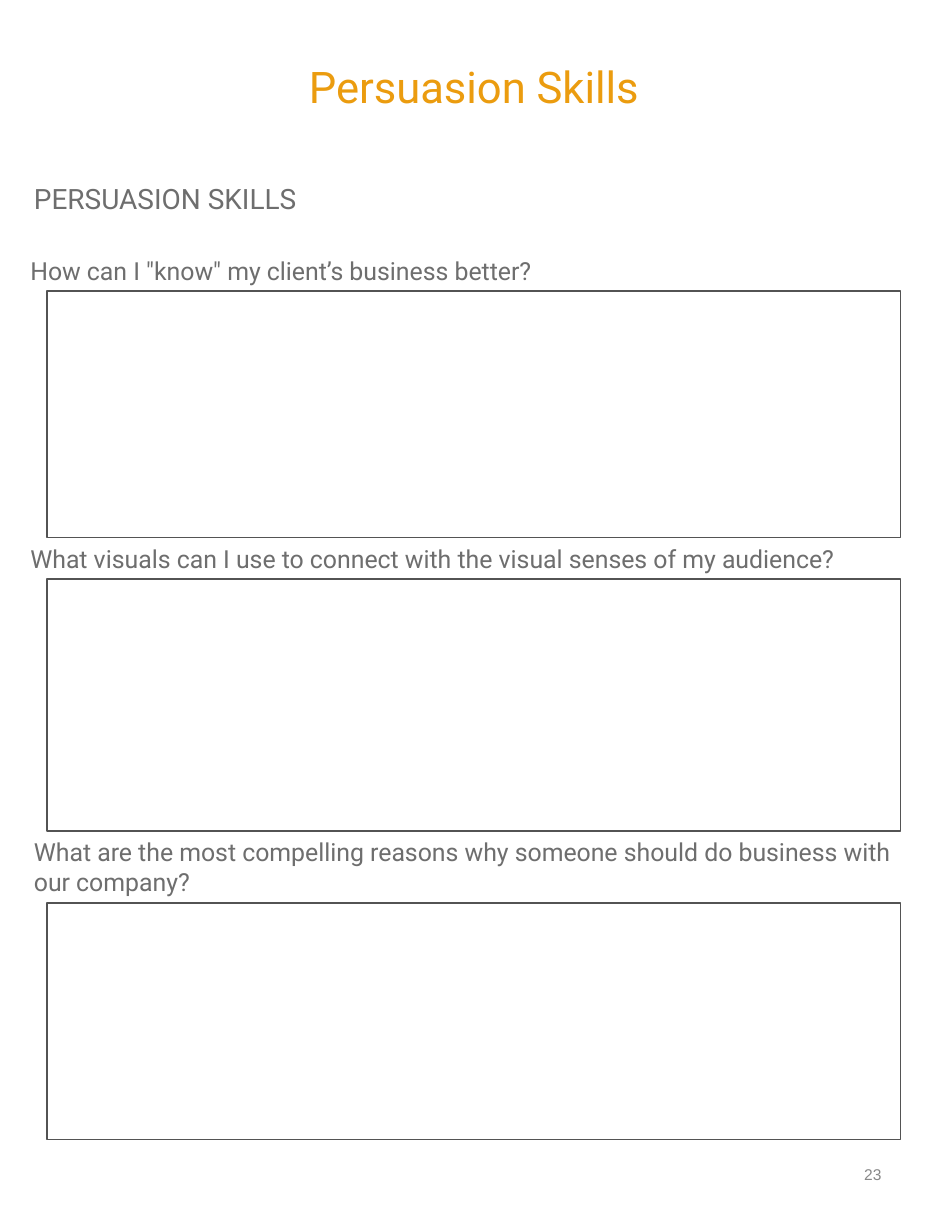
from dataclasses import dataclass

from pptx import Presentation
from pptx.dml.color import RGBColor
from pptx.enum.shapes import MSO_SHAPE
from pptx.enum.text import MSO_ANCHOR as Anchor, MSO_AUTO_SIZE as AutoSize, PP_ALIGN as Align
from pptx.util import Cm, Pt


@dataclass(frozen=True)
class Theme:
    font: str = "Roboto"
    number_font: str = "Arial"
    accent: str = "EB9C0F"
    body: str = "6E6E6E"
    muted: str = "888888"
    outline: str = "535353"
    title_size: int = 28
    heading_size: int = 18
    prompt_size: int = 16
    number_size: int = 10


THEME = Theme()
TEXT_WIDTH = 20.22
BOX_LEFT, BOX_WIDTH = 1.07, 19.35
FIRST_PROMPT_TOP = 5.66

# Prompt, its left edge and height, and the height of its answer box, in cm
SECTIONS = [
    ('How can I "know" my client’s business better?', 0.56, 0.94, 5.59),
    ("What visuals can I use to connect with the visual senses of my audience?",
     0.56, 0.94, 5.72),
    ("What are the most compelling reasons why someone should do business with our company?",
     0.64, 1.63, 5.36),
]


def place(shape, left, top, width, height):
    shape.left, shape.top = Cm(left), Cm(top)
    shape.width, shape.height = Cm(width), Cm(height)


def write(shape, text, size, color, font=THEME.font, align=Align.LEFT,
          anchor=Anchor.TOP, wrap=True):
    frame = shape.text_frame
    frame.word_wrap = wrap
    frame.auto_size = AutoSize.SHAPE_TO_FIT_TEXT
    frame.vertical_anchor = anchor
    frame.margin_left = frame.margin_right = Cm(0.13)
    frame.margin_top = frame.margin_bottom = Cm(0.13)
    paragraph = frame.paragraphs[0]
    paragraph.alignment = align
    run = paragraph.add_run()
    run.text = text
    run.font.name = font
    run.font.size = Pt(size)
    run.font.color.rgb = RGBColor.from_string(color)
    return paragraph


def add_title(slide, text):
    title = slide.shapes.title
    place(title, BOX_LEFT, 1.35, BOX_WIDTH, 1.35)
    paragraph = write(title, text, THEME.title_size, THEME.accent,
                      align=Align.CENTER, anchor=Anchor.MIDDLE)
    paragraph.line_spacing = 0.9
    paragraph.space_before = Pt(0)


def add_text(slide, text, left, top, width, height, size, color, **options):
    box = slide.shapes.add_textbox(Cm(left), Cm(top), Cm(width), Cm(height))
    write(box, text, size, color, **options)


def add_answer_box(slide, top, height):
    box = slide.shapes.add_shape(MSO_SHAPE.RECTANGLE, Cm(BOX_LEFT), Cm(top),
                                 Cm(BOX_WIDTH), Cm(height))
    box.shadow.inherit = False
    box.fill.background()
    box.line.color.rgb = RGBColor.from_string(THEME.outline)
    box.line.width = Pt(1)


def main():
    presentation = Presentation()
    presentation.slide_width, presentation.slide_height = Cm(21.59), Cm(27.94)
    slide = presentation.slides.add_slide(presentation.slide_layouts[5])

    # Title and heading
    add_title(slide, "Persuasion Skills")
    add_text(slide, "PERSUASION SKILLS", 0.64, 3.99, TEXT_WIDTH, 1.04,
             THEME.heading_size, THEME.body)

    # Prompts with answer boxes, stacked down the page
    top = FIRST_PROMPT_TOP
    for prompt, left, prompt_height, box_height in SECTIONS:
        add_text(slide, prompt, left, top, TEXT_WIDTH, prompt_height,
                 THEME.prompt_size, THEME.body)
        add_answer_box(slide, top + prompt_height, box_height)
        top += prompt_height + box_height

    # Page number
    add_text(slide, "23", 19.43, 26.31, 0.69, 0.64, THEME.number_size, THEME.muted,
             font=THEME.number_font, align=Align.RIGHT, anchor=Anchor.MIDDLE, wrap=False)

    presentation.save("out.pptx")


if __name__ == "__main__":
    main()
